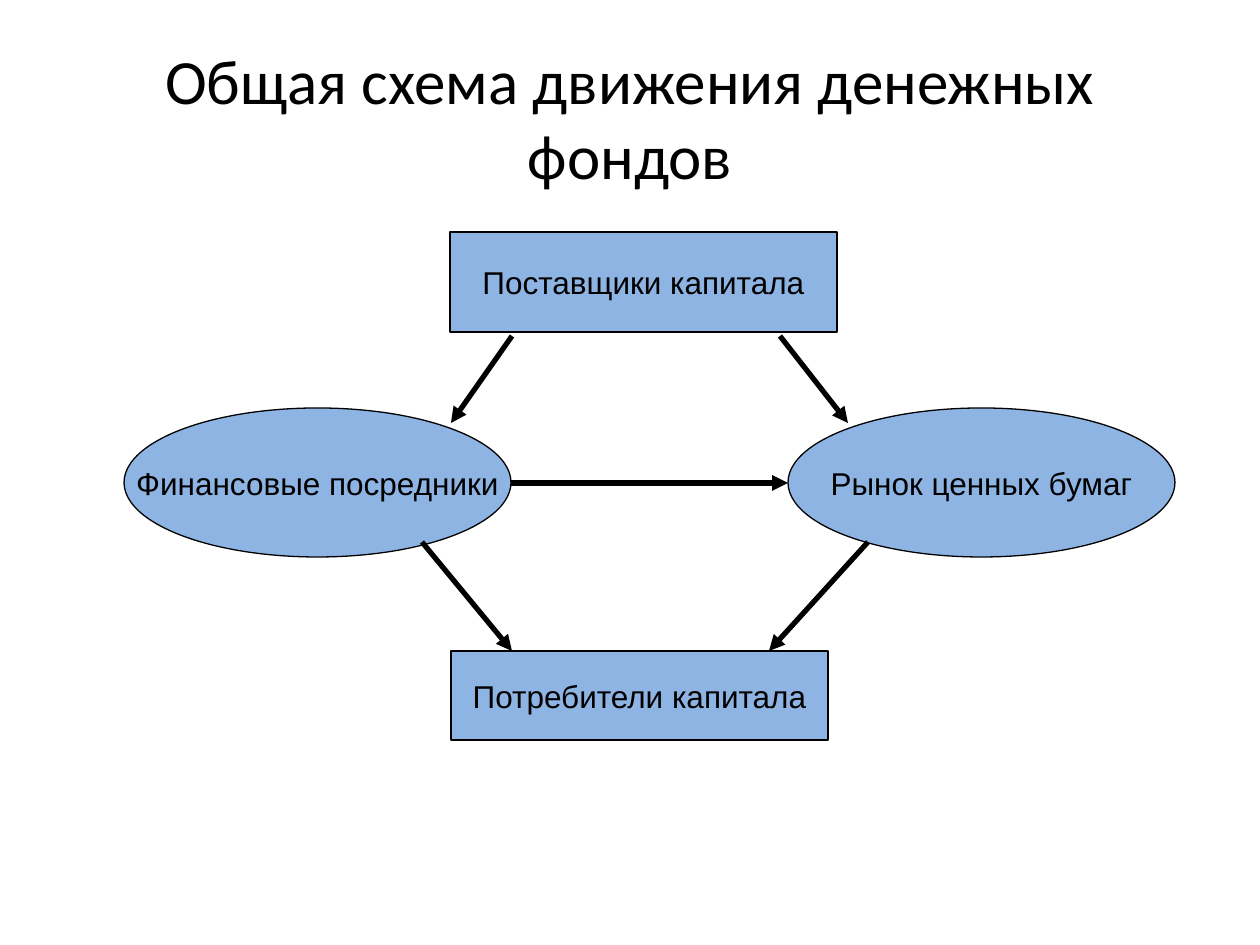
import pptx
import pptx.util
import pptx.dml.color
import pptx.enum.shapes
import pptx.enum.text
import pptx.oxml.ns
from dataclasses import dataclass

SCALE = 914400 / 126
KIND = pptx.enum.shapes.MSO_SHAPE
ALIGN = pptx.enum.text.PP_ALIGN
MIDDLE = pptx.enum.text.MSO_ANCHOR.MIDDLE


def emu(px):
    return pptx.util.Emu(round(px * SCALE))


def color(code):
    return pptx.dml.color.RGBColor.from_string(code)


@dataclass
class Theme:
    ink: str = "000000"
    fill: str = "8EB4E3"
    head: str = "Calibri"
    body: str = "Arial"
    big: int = 36
    small: int = 18
    thin: float = 0.75
    thick: int = 3


class Deck:
    def __init__(self, theme):
        self.theme = theme
        self.file = pptx.Presentation()
        self.file.slide_width = emu(1260)
        self.file.slide_height = emu(945)
        self.slide = self.file.slides.add_slide(self.file.slide_layouts[5])

    def label(self, frame, text, font, size):
        frame.vertical_anchor = MIDDLE
        para = frame.paragraphs[0]
        para.alignment = ALIGN.CENTER
        run = para.add_run()
        run.text = text
        run.font.name = font
        run.font.size = pptx.util.Pt(size)
        run.font.color.rgb = color(self.theme.ink)

    def title(self, text, left, top, width, height):
        shape = self.slide.shapes.title
        shape.left, shape.top = emu(left), emu(top)
        shape.width, shape.height = emu(width), emu(height)
        shape.text_frame.word_wrap = True
        self.label(shape.text_frame, text, self.theme.head, self.theme.big)

    def node(self, kind, text, left, top, width, height):
        shape = self.slide.shapes.add_shape(
            kind, emu(left), emu(top), emu(width), emu(height))
        shape.shadow.inherit = False
        shape.fill.solid()
        shape.fill.fore_color.rgb = color(self.theme.fill)
        shape.line.color.rgb = color(self.theme.ink)
        shape.line.width = pptx.util.Pt(self.theme.thin)
        shape.text_frame.word_wrap = False
        self.label(shape.text_frame, text, self.theme.body, self.theme.small)

    def arrow(self, start, end):
        line = self.slide.shapes.add_connector(
            pptx.enum.shapes.MSO_CONNECTOR.STRAIGHT,
            *map(emu, start), *map(emu, end))
        line.line.color.rgb = color(self.theme.ink)
        line.line.width = pptx.util.Pt(self.theme.thick)
        qn = pptx.oxml.ns.qn
        props = line.element.spPr
        stroke = props.find(qn("a:ln"))
        stroke.append(stroke.makeelement(qn("a:tailEnd"), {"type": "triangle"}))
        props.append(props.makeelement(qn("a:effectLst"), {}))


def main():
    deck = Deck(Theme())
    deck.title("Общая схема движения денежных фондов", 63, 38, 1134, 158)

    deck.node(KIND.RECTANGLE, "Поставщики капитала", 450, 232, 387, 100)
    deck.node(KIND.RECTANGLE, "Потребители капитала", 451, 651, 377, 89)
    ovals = [("Финансовые посредники", 124), ("Рынок ценных бумаг", 788)]
    for text, left in ovals:
        deck.node(KIND.OVAL, text, left, 408, 387, 149)

    upper, lower = (336, 423), (542, 651)
    flows = [
        (512, 451, upper),
        (422, 512, lower),
        (780, 848, upper),
        (868, 769, lower),
        (511, 788, (483, 483)),
    ]
    for left, right, (top, bottom) in flows:
        deck.arrow((left, top), (right, bottom))

    deck.file.save("out.pptx")


if __name__ == "__main__":
    main()
